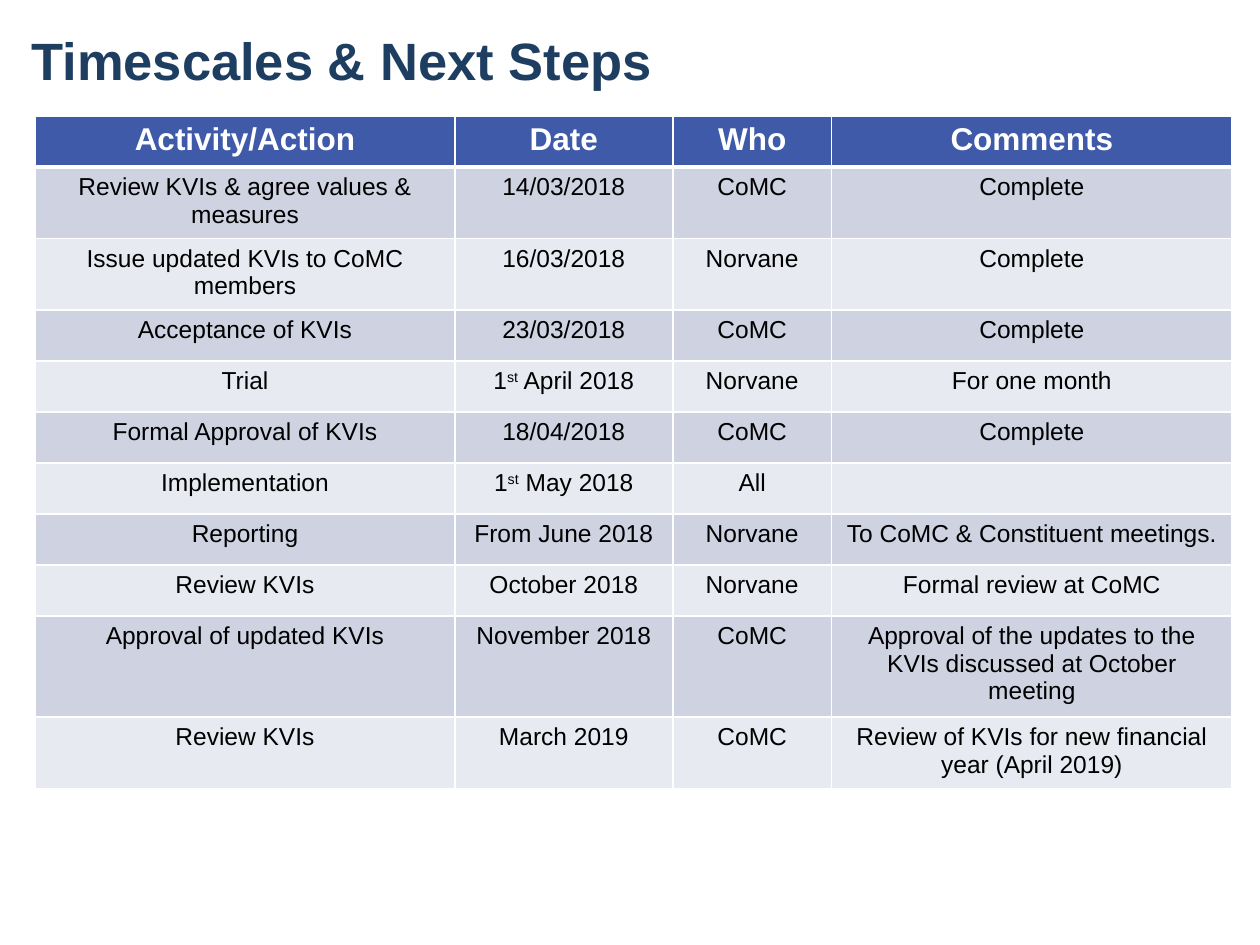
from dataclasses import dataclass

from lxml import etree
from pptx import Presentation
from pptx.dml.color import RGBColor
from pptx.enum.text import MSO_ANCHOR, PP_ALIGN
from pptx.oxml.ns import qn
from pptx.util import Inches, Pt

CENTER = PP_ALIGN.CENTER
MIDDLE = MSO_ANCHOR.MIDDLE
BLANK_LAYOUT = 6
SUPERSCRIPT_MARK = "^"


@dataclass(frozen=True)
class Theme:
    font: str = "Arial"
    title_color: str = "1D3E61"
    header_fill: str = "3E5AA8"
    header_text: str = "FFFFFF"
    body_text: str = "000000"
    band_fills: tuple = ("CED2E1", "E8EAF1")
    border: str = "FFFFFF"
    title_size: int = 30
    header_size: int = 18
    body_size: int = 14
    thin_line: int = 1
    thick_line: int = 3


COLUMN_WIDTHS = (3.33, 1.73, 1.26, 3.18)
HEADINGS = ("Activity/Action", "Date", "Who", "Comments")
STEPS = (
    ("Review KVIs & agree values & measures", "14/03/2018", "CoMC", "Complete"),
    ("Issue updated KVIs to CoMC members", "16/03/2018", "Norvane", "Complete"),
    ("Acceptance of KVIs", "23/03/2018", "CoMC", "Complete"),
    ("Trial", "1^st^ April 2018", "Norvane", "For one month"),
    ("Formal Approval of KVIs", "18/04/2018", "CoMC", "Complete"),
    ("Implementation", "1^st^ May 2018", "All", ""),
    ("Reporting", "From June 2018", "Norvane", "To CoMC & Constituent meetings."),
    ("Review KVIs", "October 2018", "Norvane", "Formal review at CoMC"),
    ("Approval of updated KVIs", "November 2018", "CoMC",
     "Approval of the updates to the KVIs discussed at October meeting"),
    ("Review KVIs", "March 2019", "CoMC",
     "Review of KVIs for new financial year (April 2019)"),
)


class SlideBuilder:
    def __init__(self, page, theme):
        self.page = page
        self.theme = theme

    def style(self, span, size, color, bold):
        span.font.name = self.theme.font
        span.font.size = Pt(size)
        span.font.bold = bold
        span.font.color.rgb = RGBColor.from_string(color)

    def title(self, text, left, top, width, height):
        box = self.page.shapes.add_textbox(
            Inches(left), Inches(top), Inches(width), Inches(height))
        frame = box.text_frame
        frame.word_wrap = True
        frame.vertical_anchor = MIDDLE
        frame.margin_left = frame.margin_right = 0
        frame.margin_top = frame.margin_bottom = 0
        frame.text = text
        self.style(frame.paragraphs[0].runs[0],
                   self.theme.title_size, self.theme.title_color, True)

    def borders(self, cell, top, bottom):
        thin = self.theme.thin_line
        properties = cell._tc.get_or_add_tcPr()
        sides = (("L", thin), ("R", thin), ("T", top), ("B", bottom))
        for index, (side, width) in enumerate(sides):
            line = etree.Element(qn(f"a:ln{side}"), w=str(Pt(width)))
            fill = etree.SubElement(line, qn("a:solidFill"))
            etree.SubElement(fill, qn("a:srgbClr"), val=self.theme.border)
            properties.insert(index, line)

    def cell(self, cell, text, fill, size, color, bold):
        cell.fill.solid()
        cell.fill.fore_color.rgb = RGBColor.from_string(fill)
        para = cell.text_frame.paragraphs[0]
        para.alignment = CENTER
        if not text:
            return
        for index, part in enumerate(text.split(SUPERSCRIPT_MARK)):
            span = para.add_run()
            span.text = part
            self.style(span, size, color, bold)
            if index % 2:
                span._r.get_or_add_rPr().set("baseline", "30000")

    def table(self, headings, rows, widths, left, top, height):
        theme = self.theme
        table = self.page.shapes.add_table(
            len(rows) + 1, len(widths), Inches(left), Inches(top),
            Inches(sum(widths)), Inches(height)).table
        for column, width in zip(table.columns, widths):
            column.width = Inches(width)
        for row_index, texts in enumerate((headings, *rows)):
            if row_index == 0:
                look = (theme.header_fill, theme.header_size, theme.header_text, True)
            else:
                band = theme.band_fills[(row_index - 1) % 2]
                look = (band, theme.body_size, theme.body_text, False)
            above = theme.thick_line if row_index == 1 else theme.thin_line
            below = theme.thick_line if row_index == 0 else theme.thin_line
            for column_index, text in enumerate(texts):
                cell = table.cell(row_index, column_index)
                self.cell(cell, text, *look)
                self.borders(cell, above, below)


def main():
    deck = Presentation()
    deck.slide_width = Inches(10)
    deck.slide_height = Inches(7.5)
    page = deck.slides.add_slide(deck.slide_layouts[BLANK_LAYOUT])
    builder = SlideBuilder(page, Theme())
    builder.title("Timescales & Next Steps", 0.25, -0.06, 9.5, 1.06)
    builder.table(HEADINGS, STEPS, COLUMN_WIDTHS, 0.28, 0.92, 4.46)
    deck.save("out.pptx")


if __name__ == "__main__":
    main()
